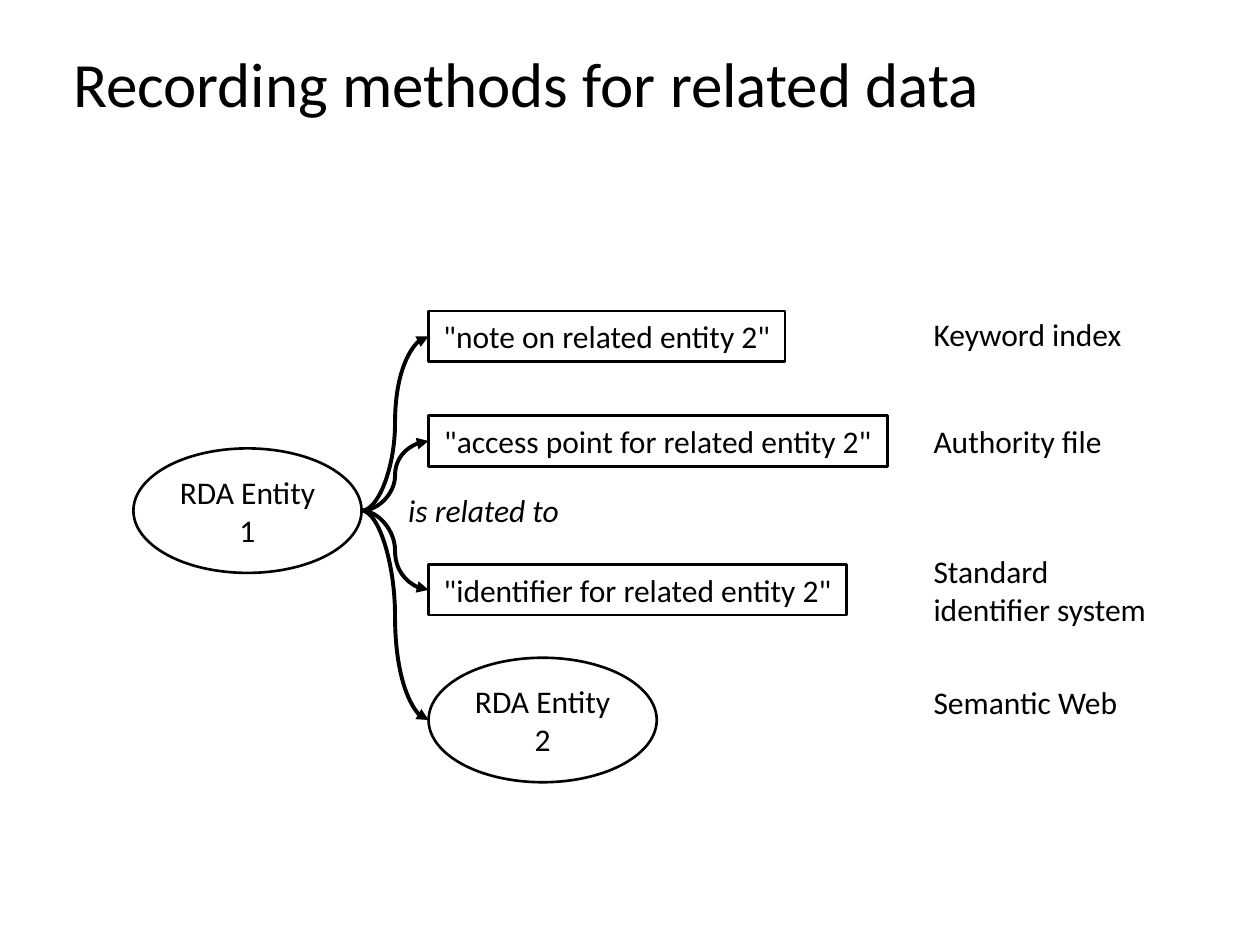
from dataclasses import dataclass
from lxml.etree import SubElement
from pptx import Presentation
from pptx.dml.color import RGBColor as RGB
from pptx.enum.shapes import MSO_CONNECTOR as Link, MSO_SHAPE as Form
from pptx.enum.text import MSO_ANCHOR as Anchor, PP_ALIGN as Align
from pptx.oxml.ns import qn
from pptx.util import Cm, Pt


@dataclass(frozen=True)
class Theme:
    ink: RGB = RGB(0, 0, 0)
    font: str = "Calibri"
    title: int = 36
    body: int = 18
    edge: float = 1.5
    arrow: float = 2.25


theme = Theme()


def write(shape, text, size=theme.body, align=Align.LEFT, italic=False,
          wrap=False, anchor=Anchor.TOP):
    frame = shape.text_frame
    frame.text = text
    frame.word_wrap = wrap
    frame.vertical_anchor = anchor
    for para in frame.paragraphs:
        para.alignment = align
        font = para.runs[0].font
        font.name, font.size, font.italic = theme.font, Pt(size), italic
        font.color.rgb = theme.ink


def outline(form, text, left, top, width, height):
    shape = slide.shapes.add_shape(form, Cm(left), Cm(top), Cm(width), Cm(height))
    shape.shadow.inherit = False
    shape.fill.background()
    shape.line.color.rgb = theme.ink
    shape.line.width = Pt(theme.edge)
    write(shape, text, align=Align.CENTER, anchor=Anchor.MIDDLE)
    return shape


deck = Presentation()
deck.slide_width, deck.slide_height = Cm(25.4), Cm(19.05)
slide = deck.slides.add_slide(deck.slide_layouts[5])

# Title
title = slide.shapes.title
title.left, title.top, title.width, title.height = Cm(1.22), Cm(0.76), Cm(18.95), Cm(1.8)
write(title, "Recording methods for related data", size=theme.title)

# Entities: source on the left, target at the foot of the column
column = 8.64
oval = (4.6, 2.51)
source = outline(Form.OVAL, "RDA Entity\n1", 2.69, 9.04, *oval)
target = outline(Form.OVAL, "RDA Entity\n2", column, 13.26, *oval)

# Ways of recording the related entity
ends = [target]
for text, top, width in [
    ('"note on related entity 2"', 6.27, 7.19),
    ('"access point for related entity 2"', 8.38, 9.25),
    ('"identifier for related entity 2"', 11.38, 8.43),
]:
    ends.append(outline(Form.RECTANGLE, text, column, top, width, 1.02))

# Curved arrows from the source to the left side of each end
for end in ends:
    curve = slide.shapes.add_connector(
        Link.CURVE, source.left + source.width, source.top + source.height // 2,
        end.left, end.top + end.height // 2)
    curve.line.color.rgb = theme.ink
    curve.line.width = Pt(theme.arrow)
    SubElement(curve.line._get_or_add_ln(), qn("a:tailEnd"), type="triangle")
    SubElement(curve._element.spPr, qn("a:effectLst"))

# Relation name and the matching uses on the right
side = 18.57
for text, left, top, width, height, style in [
    ("is related to", 7.98, 9.78, 3.58, 1.02, {"italic": True}),
    ("Keyword index", side, 6.22, 4.34, 1.02, {}),
    ("Authority file", side, 8.38, 3.94, 1.02, {}),
    ("Standard identifier system", side, 11, 4.85, 1.8, {"wrap": True}),
    ("Semantic Web", side, 13.64, 4.27, 1.02, {}),
]:
    label = slide.shapes.add_textbox(Cm(left), Cm(top), Cm(width), Cm(height))
    write(label, text, **style)

deck.save("out.pptx")
